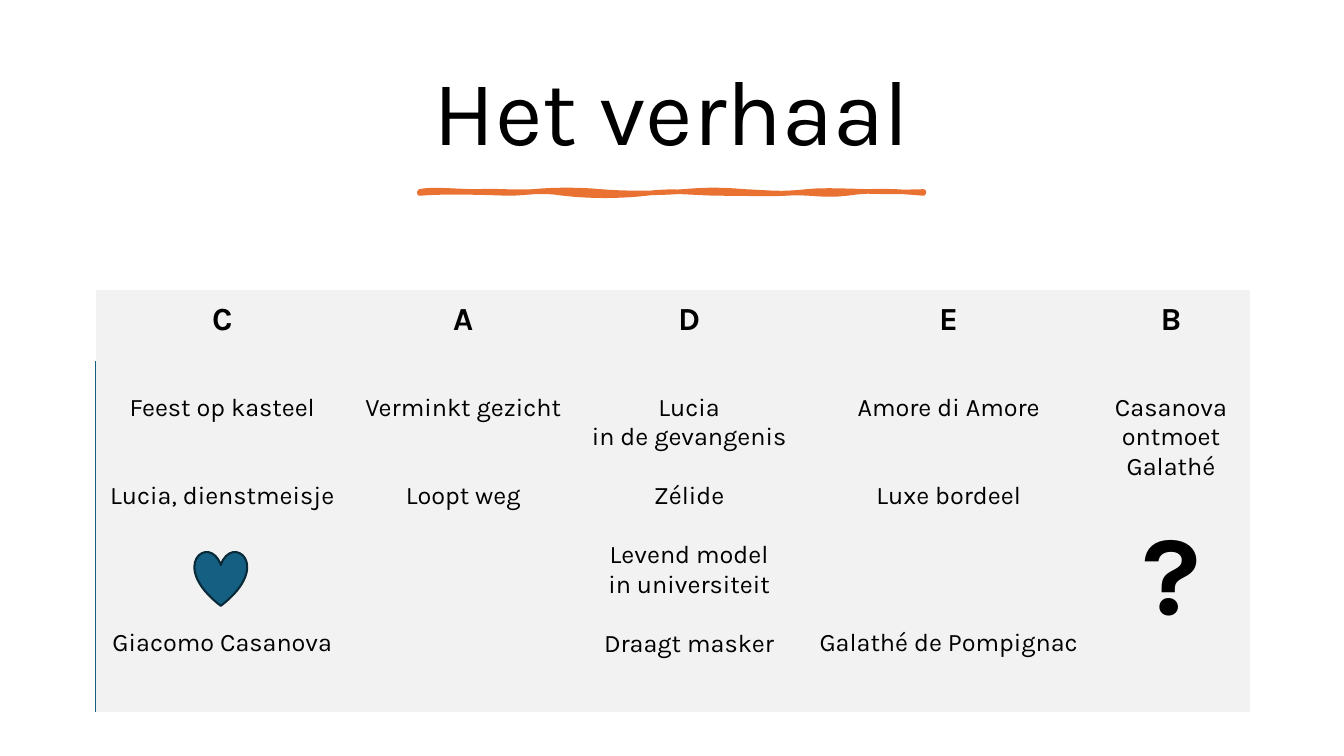
from dataclasses import dataclass

from lxml.etree import SubElement
from pptx import Presentation
from pptx.dml.color import RGBColor
from pptx.enum.shapes import MSO_SHAPE
from pptx.enum.text import MSO_ANCHOR, MSO_AUTO_SIZE, PP_ALIGN
from pptx.oxml.ns import qn
from pptx.util import Pt

PX = 9144


@dataclass(frozen=True)
class Theme:
    """Colours, font and type sizes of the slide."""
    font: str = "Karla"
    ink: str = "000000"
    panel: str = "F2F2F2"
    accent: str = "E97132"
    heart: str = "156082"
    heart_edge: str = "092A39"
    title: int = 66
    header: int = 23
    body: int = 18
    mark: int = 80
    body_line: int = 21


THEME = Theme()
NO_TABLE_STYLE = "{2D5ABB26-0587-4C30-8999-92F81FD0307C}"

STORY = [
    ("C", 256, [("Feest op kasteel", 0), ("Lucia, dienstmeisje", 2),
                ("Giacomo Casanova", 4)]),
    ("A", 222, [("Verminkt gezicht", 0), ("Loopt weg", 2)]),
    ("D", 226, [("Lucia", 0), ("in de gevangenis", 0), ("Zélide", 1),
                ("Levend model", 1), ("in universiteit", 0), ("Draagt masker", 1)]),
    ("E", 289, [("Amore di Amore", 0), ("Luxe bordeel", 2),
                ("Galathé de Pompignac", 4)]),
    ("B", 152, [("Casanova", 0), ("ontmoet", 0), ("Galathé", 0), ("?", 1)]),
]

STROKE_START = (416, 190)
STROKE_CURVES = [
    ((428, 187), (454, 190), (473, 190)), ((492, 189), (509, 191), (529, 190)),
    ((549, 188), (574, 188), (596, 190)), ((617, 192), (653, 192), (677, 190)),
    ((702, 188), (714, 188), (739, 190)), ((763, 191), (774, 193), (800, 190)),
    ((826, 187), (867, 192), (916, 190)), ((917, 191), (916, 191), (916, 192)),
    ((895, 190), (865, 188), (840, 192)), ((815, 195), (801, 190), (779, 192)),
    ((756, 193), (747, 192), (717, 192)), ((687, 192), (667, 188), (641, 192)),
    ((614, 195), (585, 195), (559, 192)), ((534, 188), (523, 192), (503, 192)),
    ((483, 191), (438, 190), (416, 192)), ((416, 191), (416, 190), (416, 190)),
]


def colour(value):
    """Turn a hex string into a colour."""
    return RGBColor.from_string(value)


def style_paragraph(paragraph, size, bold=False):
    """Centre a paragraph and set its type."""
    paragraph.alignment = PP_ALIGN.CENTER
    for run in paragraph.runs:
        run.font.name = THEME.font
        run.font.size = Pt(size)
        run.font.bold = bold
        run.font.color.rgb = colour(THEME.ink)


def paint(shape, fill, edge, width):
    """Give a shape its fill and outline, without a shadow."""
    shape.shadow.inherit = False
    shape.fill.solid()
    shape.fill.fore_color.rgb = colour(fill)
    shape.line.color.rgb = colour(edge)
    shape.line.width = Pt(width)


def place_title(slide, wording):
    """Move and format the title placeholder."""
    title = slide.shapes.title
    title.left, title.top, title.width, title.height = (
        n * PX for n in (70, 46, 1193, 137))
    frame = title.text_frame
    frame.text = wording
    frame.word_wrap = True
    frame.auto_size = MSO_AUTO_SIZE.NONE
    frame.vertical_anchor = MSO_ANCHOR.MIDDLE
    heading = frame.paragraphs[0]
    heading.line_spacing = 0.9
    style_paragraph(heading, THEME.title)


def curve_points(start, curves, steps=8):
    """Sample a chain of cubic curves as EMU points."""
    points = []
    for first, second, end in curves:
        for step in range(1, steps + 1):
            t = step / steps
            u = 1 - t
            points.append(tuple(
                round(PX * (u**3 * a + 3 * u * u * t * b + 3 * u * t * t * c + t**3 * d))
                for a, b, c, d in zip(start, first, second, end)))
        start = end
    return points


def draw_brush_stroke(slide):
    """Draw the wavy line under the title."""
    x, y = STROKE_START
    builder = slide.shapes.build_freeform(x * PX, y * PX)
    builder.add_line_segments(curve_points(STROKE_START, STROKE_CURVES))
    paint(builder.convert_to_shape(), THEME.accent, THEME.accent, 3.25)


def prepare_cell(cell, top_margin):
    """Set the fill and margins of a table cell."""
    cell.fill.solid()
    cell.fill.fore_color.rgb = colour(THEME.panel)
    cell.margin_left, cell.margin_top, cell.margin_right, cell.margin_bottom = (
        n * PX for n in (10, top_margin, 15, 22))


def fill_header(cell, letter):
    """Write the letter of a story part."""
    prepare_cell(cell, 3)
    cell.vertical_anchor = MSO_ANCHOR.BOTTOM
    cell.text_frame.text = letter
    style_paragraph(cell.text_frame.paragraphs[0], THEME.header, True)


def fill_events(cell, events):
    """Write the events of a story part with the gaps before them."""
    prepare_cell(cell, 32)
    frame = cell.text_frame
    frame.text = "\n".join(wording for wording, _ in events)
    for paragraph, (wording, gap_lines) in zip(frame.paragraphs, events):
        if gap_lines:
            paragraph.space_before = Pt(gap_lines * THEME.body_line)
        is_mark = wording == "?"
        style_paragraph(paragraph, THEME.mark if is_mark else THEME.body, is_mark)


def add_left_border(cell, hue):
    """Draw a one point line on the left side of a cell."""
    properties = cell._tc.get_or_add_tcPr()
    border = SubElement(properties, qn("a:lnL"), w=str(Pt(1)))
    fill = SubElement(border, qn("a:solidFill"))
    SubElement(fill, qn("a:srgbClr"), val=hue)
    properties.insert(0, border)


def add_story_table(slide):
    """Add the table with one column for each story part."""
    row_heights = (70, 348)
    width = sum(part[1] for part in STORY)
    table = slide.shapes.add_table(
        2, len(STORY), 95 * PX, 288 * PX, width * PX, sum(row_heights) * PX).table
    table.first_row = table.horz_banding = False
    table._tbl.tblPr.find(qn("a:tableStyleId")).text = NO_TABLE_STYLE
    for row, height in zip(table.rows, row_heights):
        row.height = height * PX
    for index, (letter, column_width, events) in enumerate(STORY):
        table.columns[index].width = column_width * PX
        fill_header(table.cell(0, index), letter)
        fill_events(table.cell(1, index), events)
    add_left_border(table.cell(1, 0), THEME.heart)


def add_heart(slide):
    """Add the heart between the two lovers."""
    heart = slide.shapes.add_shape(
        MSO_SHAPE.HEART, 193 * PX, 547 * PX, 52 * PX, 54 * PX)
    paint(heart, THEME.heart, THEME.heart_edge, 1.5)


def main():
    """Build the slide and save it."""
    deck = Presentation()
    deck.slide_width, deck.slide_height = 1333 * PX, 750 * PX
    slide = deck.slides.add_slide(deck.slide_layouts[5])
    place_title(slide, "Het verhaal")
    draw_brush_stroke(slide)
    add_story_table(slide)
    add_heart(slide)
    deck.save("out.pptx")


if __name__ == "__main__":
    main()
